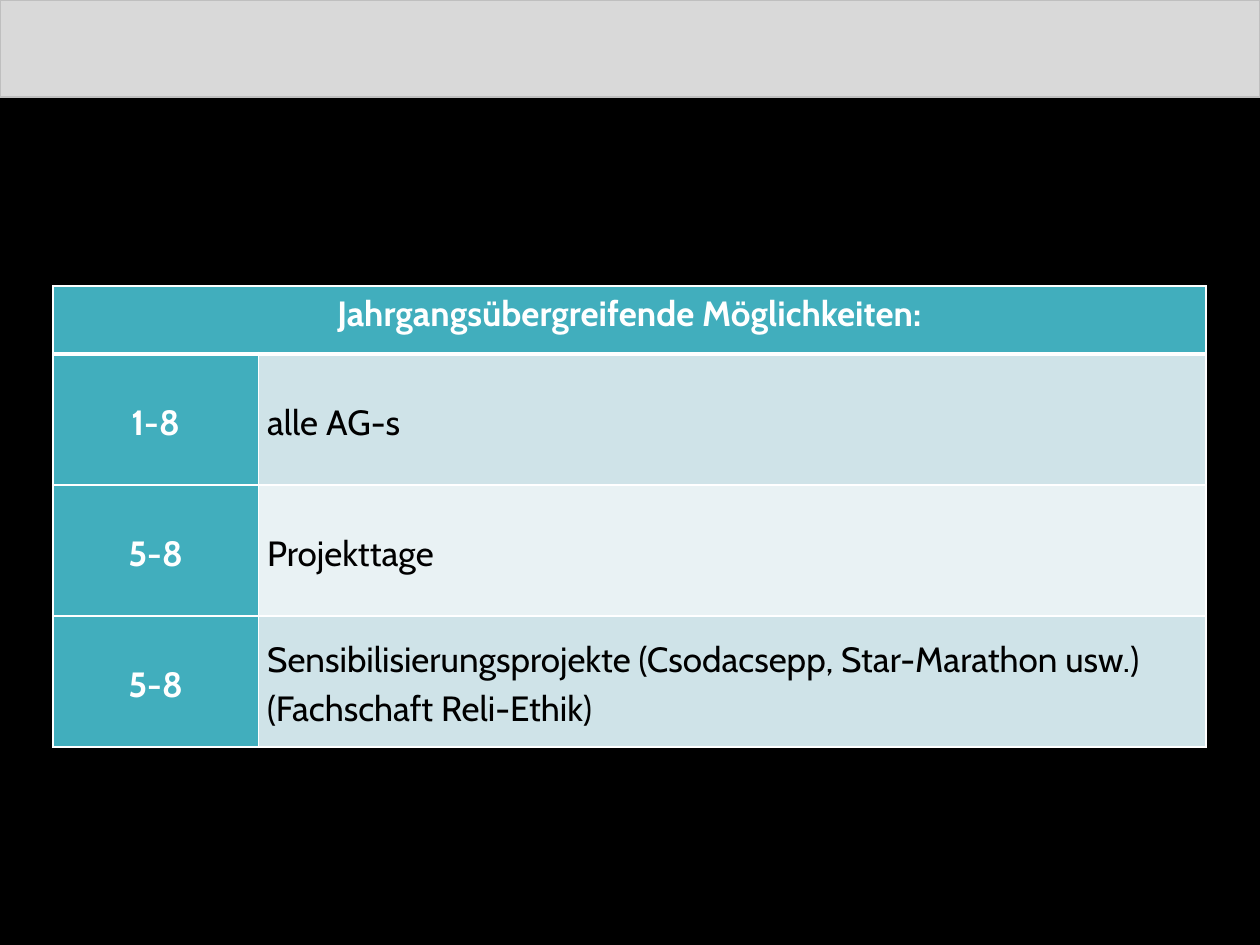
from lxml import etree
from pptx import Presentation
from pptx.dml.color import RGBColor
from pptx.enum import shapes, text
from pptx.oxml.ns import qn
from pptx.util import Inches, Pt

# Content
HEADING = "Jahrgangsübergreifende Möglichkeiten:"
ROWS = [
    ("1-8", "alle AG-s"),
    ("5-8", "Projekttage"),
    ("5-8", "Sensibilisierungsprojekte (Csodacsepp, Star-Marathon usw.) "
            "(Fachschaft Reli-Ethik)"),
]

# Style
FONT = "Cabin"
BLACK = RGBColor(0x00, 0x00, 0x00)
WHITE = RGBColor(0xFF, 0xFF, 0xFF)
BAND_FILL = RGBColor(0xD9, 0xD9, 0xD9)
BAND_LINE = RGBColor(0xBF, 0xBF, 0xBF)
TEAL = RGBColor(0x41, 0xAE, 0xBD)
STRIPES = [RGBColor(0xCF, 0xE3, 0xE8), RGBColor(0xE9, 0xF2, 0xF4)]

# Layout in inches
LEFT, TOP = 0.42, 2.27
COL_WIDTHS = [1.63, 7.52]
HEADER_HEIGHT, ROW_HEIGHT = 0.54, 1.04


def set_borders(cell, bottom=1):
    """Draw white borders, which must come before the fill in the cell."""
    pr = cell._tc.get_or_add_tcPr()
    widths = {"a:lnL": 1, "a:lnR": 1, "a:lnT": 1, "a:lnB": bottom}
    for i, (tag, width) in enumerate(widths.items()):
        ln = etree.Element(qn(tag), w=str(Pt(width)))
        fill = etree.SubElement(ln, qn("a:solidFill"))
        etree.SubElement(fill, qn("a:srgbClr"), val=str(WHITE))
        pr.insert(i, ln)


def fill_cell(cell, words, fill, color, bold, align, side=0.07, below=0):
    cell.fill.solid()
    cell.fill.fore_color.rgb = fill
    cell.vertical_anchor = text.MSO_ANCHOR.MIDDLE
    cell.margin_left = cell.margin_right = Inches(side)
    cell.margin_top, cell.margin_bottom = 0, Inches(below)
    p = cell.text_frame.paragraphs[0]
    p.text = words
    p.alignment = align
    p.line_spacing = 1.15
    p.font.name, p.font.size = FONT, Pt(20)
    p.font.bold = bold
    p.font.color.rgb = color


prs = Presentation()
prs.slide_width, prs.slide_height = Inches(10), Inches(7.5)
s = prs.slides.add_slide(prs.slide_layouts[6])
s.background.fill.solid()
s.background.fill.fore_color.rgb = BLACK

# Top band
band = s.shapes.add_shape(shapes.MSO_SHAPE.RECTANGLE, 0, 0,
                          prs.slide_width, Inches(0.77))
band.shadow.inherit = False
band.fill.solid()
band.fill.fore_color.rgb = BAND_FILL
band.line.color.rgb = BAND_LINE
band.line.width = Pt(1)

# Table
heights = [HEADER_HEIGHT] + [ROW_HEIGHT] * len(ROWS)
table = s.shapes.add_table(
    len(heights), len(COL_WIDTHS), Inches(LEFT), Inches(TOP),
    Inches(sum(COL_WIDTHS)), Inches(sum(heights))).table
for column, width in zip(table.columns, COL_WIDTHS):
    column.width = Inches(width)
for row, height in zip(table.rows, heights):
    row.height = Inches(height)

# Heading across both columns
heading = table.cell(0, 0)
heading.merge(table.cell(0, 1))
fill_cell(heading, HEADING, TEAL, WHITE, True, text.PP_ALIGN.CENTER,
          side=0.03, below=0.15)
for cell in table.rows[0].cells:
    set_borders(cell, bottom=3)

# Grades and their activities
for i, (grades, activity) in enumerate(ROWS):
    grade_cell, activity_cell = table.rows[i + 1].cells
    fill_cell(grade_cell, grades, TEAL, WHITE, True, text.PP_ALIGN.CENTER)
    fill_cell(activity_cell, activity, STRIPES[i % 2], BLACK, False,
              text.PP_ALIGN.LEFT)
    for cell in (grade_cell, activity_cell):
        cell.text_frame.paragraphs[0].space_after = Pt(10)
        set_borders(cell)
        if i == 0:
            cell._tc.tcPr.find(qn("a:lnT")).set("w", str(Pt(3)))

prs.save("out.pptx")
